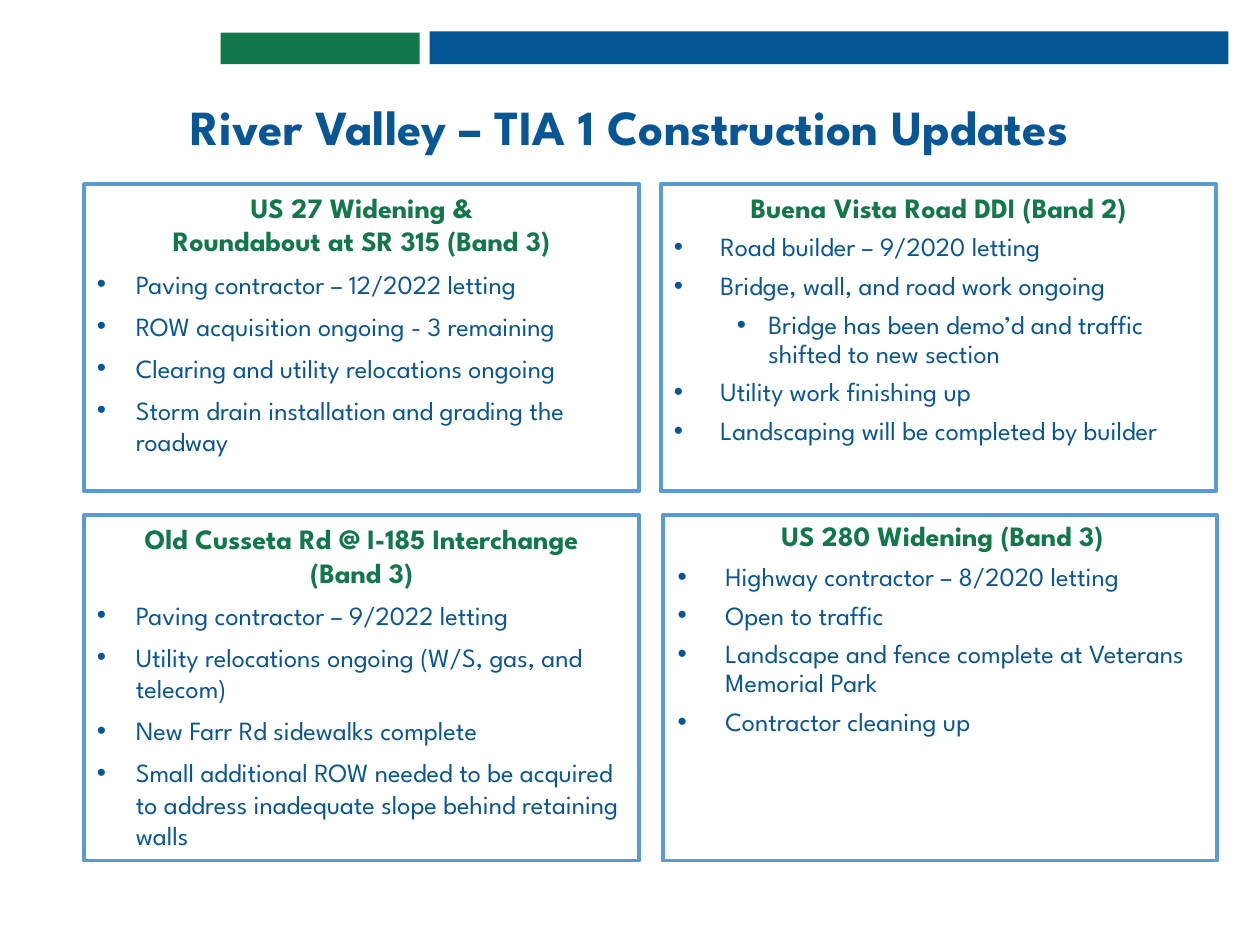
from dataclasses import dataclass

from lxml.etree import SubElement
from pptx import Presentation
from pptx.dml.color import RGBColor
from pptx.enum.shapes import MSO_SHAPE
from pptx.enum.text import MSO_ANCHOR, MSO_AUTO_SIZE, PP_ALIGN
from pptx.oxml.ns import qn
from pptx.util import Inches, Pt

FONT = "League Spartan"
BLUE = RGBColor(0x08, 0x56, 0x94)
BAR_BLUE = RGBColor(0x03, 0x55, 0x94)
GREEN = RGBColor(0x12, 0x78, 0x4B)
BORDER = RGBColor(0x5B, 0x9B, 0xD5)
WHITE = RGBColor(0xFF, 0xFF, 0xFF)

CARD_W = 4.4


@dataclass
class Bar:
    left: float
    top: float
    width: float
    height: float
    color: RGBColor


@dataclass
class Bullet:
    text: str
    level: int = 0


@dataclass
class Card:
    left: float
    top: float
    height: float
    text_left: float
    text_top: float
    text_height: float
    indent: float
    heading: list[str]
    bullets: list[Bullet]
    heading_spacing: float = 1.0
    spacing: float = 1.0


BARS = [
    Bar(3.41, 0.25, 6.34, 0.26, BAR_BLUE),
    Bar(1.75, 0.26, 1.58, 0.25, GREEN),
]

CARDS = [
    Card(0.67, 1.46, 2.44, 0.67, 1.46, 2.24, 0.31,
         ["US 27 Widening &", "Roundabout at SR 315 (Band 3)"],
         [Bullet("Paving contractor – 12/2022 letting"),
          Bullet("ROW acquisition ongoing - 3 remaining"),
          Bullet("Clearing and utility relocations ongoing"),
          Bullet("Storm drain installation and grading the roadway")]),
    Card(5.25, 1.46, 2.44, 5.25, 1.46, 2.09, 0.37,
         ["Buena Vista Road DDI (Band 2)"],
         [Bullet("Road builder – 9/2020 letting"),
          Bullet("Bridge, wall, and road work ongoing"),
          Bullet("Bridge has been demo’d and traffic shifted to new section", 1),
          Bullet("Utility work finishing up"),
          Bullet("Landscaping will be completed by builder")],
         spacing=0.9),
    Card(0.67, 4.09, 2.74, 0.67, 4.09, 2.74, 0.31,
         ["Old Cusseta Rd @ I-185 Interchange", "(Band 3)"],
         [Bullet("Paving contractor – 9/2022 letting"),
          Bullet("Utility relocations ongoing (W/S, gas, and telecom)"),
          Bullet("New Farr Rd sidewalks complete"),
          Bullet("Small additional ROW needed to be acquired to address "
                 "inadequate slope behind retaining walls")]),
    Card(5.26, 4.09, 2.74, 5.28, 4.1, 1.86, 0.38,
         ["US 280 Widening (Band 3)"],
         [Bullet("Highway contractor – 8/2020 letting"),
          Bullet("Open to traffic"),
          Bullet("Landscape and fence complete at Veterans Memorial Park"),
          Bullet("Contractor cleaning up")],
         heading_spacing=0.9, spacing=0.9),
]


def add_text(tf, text: str, *, size: float, color: RGBColor, bold: bool = False,
             align=PP_ALIGN.LEFT, spacing: float = 1.0, before: float = 0,
             level: int = 0, margin: float = 0, hanging: float = 0) -> None:
    p = tf.paragraphs[0] if not tf.text else tf.add_paragraph()
    p.alignment = align
    p.line_spacing = spacing
    p.space_before = Pt(before)
    p.level = level
    if hanging:
        pPr = p._p.get_or_add_pPr()
        pPr.set("marL", str(Inches(margin)))
        pPr.set("indent", str(-Inches(hanging)))
        SubElement(pPr, qn("a:buFont")).set("typeface", "Arial")
        SubElement(pPr, qn("a:buChar")).set("char", "•")
    r = p.add_run()
    r.text = text
    r.font.name = FONT
    r.font.size = Pt(size)
    r.font.bold = bold
    r.font.color.rgb = color


def add_rect(s, left: float, top: float, width: float, height: float,
             fill: RGBColor, line: RGBColor | None = None) -> None:
    sp = s.shapes.add_shape(MSO_SHAPE.RECTANGLE, Inches(left), Inches(top),
                            Inches(width), Inches(height))
    sp.shadow.inherit = False
    sp.fill.solid()
    sp.fill.fore_color.rgb = fill
    if line is None:
        sp.line.fill.background()
    else:
        sp.line.color.rgb = line
        sp.line.width = Pt(2.25)


def add_card(s, card: Card) -> None:
    add_rect(s, card.left, card.top, CARD_W, card.height, WHITE, BORDER)
    sp = s.shapes.add_textbox(Inches(card.text_left), Inches(card.text_top),
                              Inches(CARD_W), Inches(card.text_height))
    tf = sp.text_frame
    tf.word_wrap = True
    for line in card.heading:
        add_text(tf, line, size=16, color=GREEN, bold=True,
                 align=PP_ALIGN.CENTER, spacing=card.heading_spacing)
    for b in card.bullets:
        margin, hanging = (0.75, 0.25) if b.level else (card.indent, card.indent)
        add_text(tf, b.text, size=15, color=BLUE, spacing=card.spacing, before=6,
                 level=b.level, margin=margin, hanging=hanging)


def add_title(s, text: str) -> None:
    sp = s.shapes.title
    sp.left, sp.top = Inches(0.23), Inches(0.81)
    sp.width, sp.height = Inches(9.53), Inches(0.48)
    tf = sp.text_frame
    tf.word_wrap = True
    tf.auto_size = MSO_AUTO_SIZE.NONE
    tf.vertical_anchor = MSO_ANCHOR.BOTTOM
    add_text(tf, text, size=28, color=BLUE, bold=True,
             align=PP_ALIGN.CENTER, spacing=0.9)


def main() -> None:
    prs = Presentation()
    prs.slide_width, prs.slide_height = Inches(10), Inches(7.5)
    s = prs.slides.add_slide(prs.slide_layouts[5])
    for bar in BARS:
        add_rect(s, bar.left, bar.top, bar.width, bar.height, bar.color)
    add_title(s, "River Valley – TIA 1 Construction Updates")
    for card in CARDS:
        add_card(s, card)
    prs.save("out.pptx")


if __name__ == "__main__":
    main()
